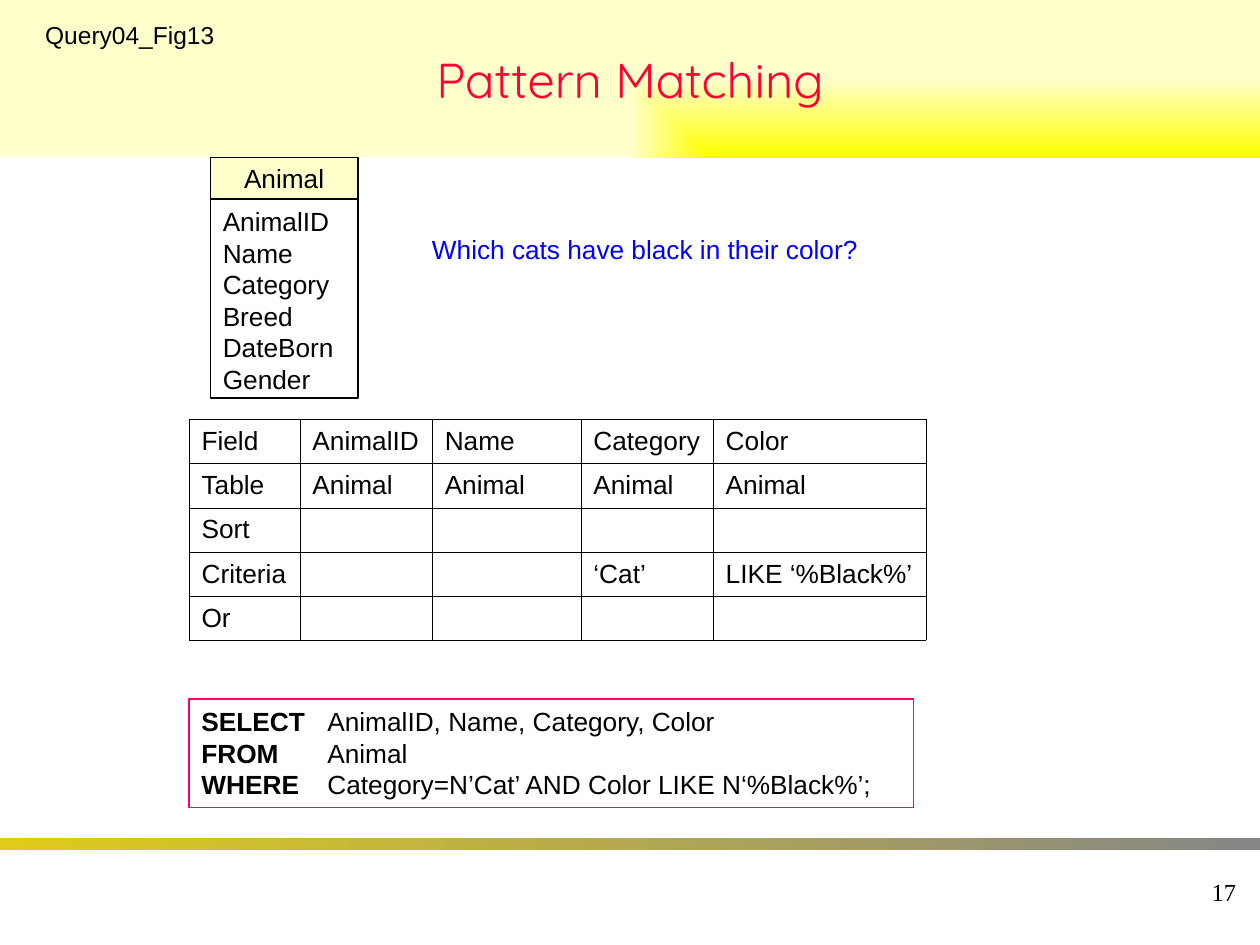
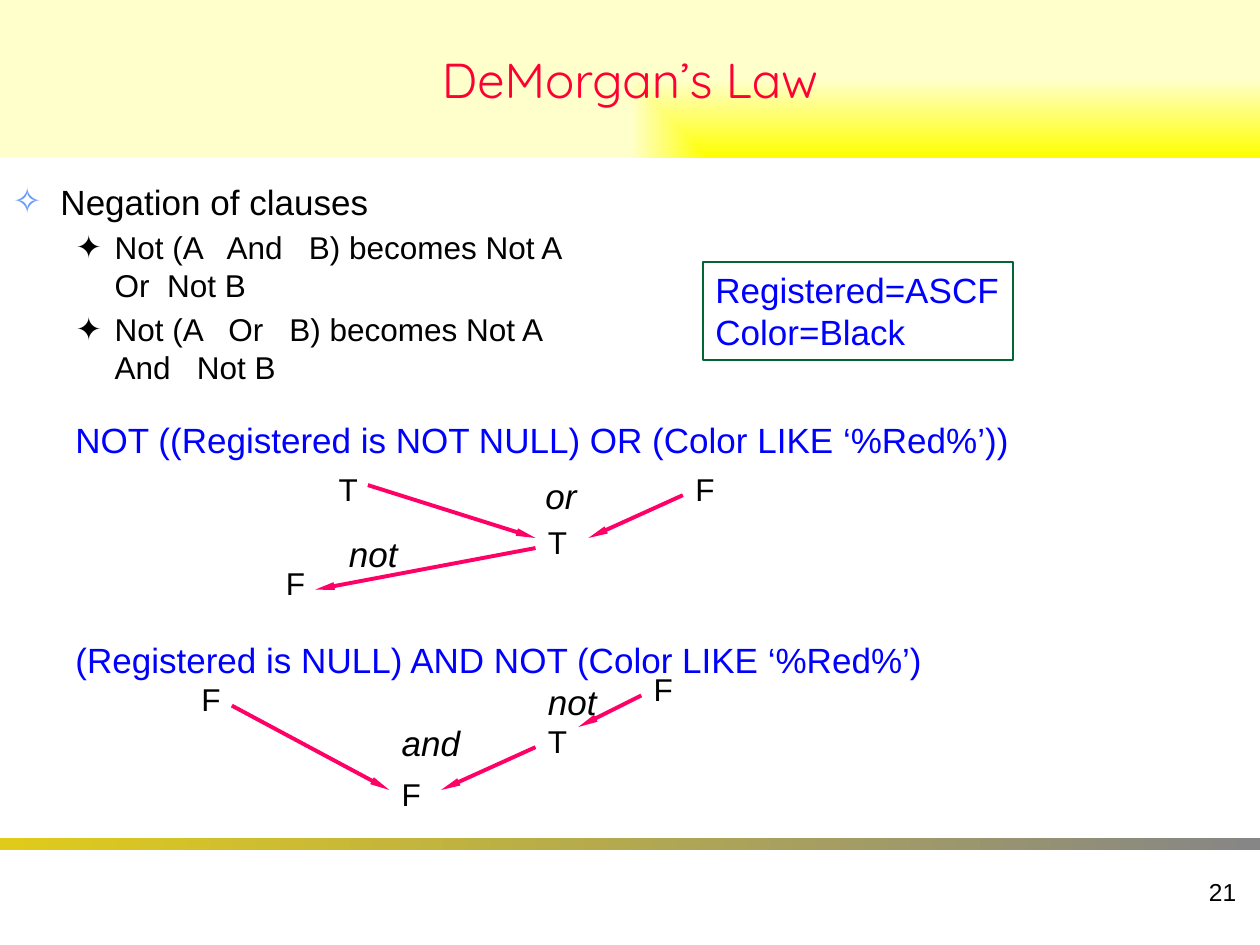
import dataclasses

import lxml.etree
import pptx
import pptx.dml.color
import pptx.enum.shapes
import pptx.enum.text
import pptx.oxml.ns
import pptx.util
from pptx.util import Inches

ALIGN = pptx.enum.text.PP_ALIGN
ANCHOR = pptx.enum.text.MSO_ANCHOR


@dataclasses.dataclass(frozen=True)
class Theme:
    """Colours, fonts and type sizes of the deck."""
    black: str = "000000"
    white: str = "FFFFFF"
    cream: str = "FFFFCC"
    yellow: str = "FFFF00"
    red: str = "FF0033"
    pink: str = "FF0066"
    blue: str = "0000FF"
    green: str = "006633"
    bullet_blue: str = "6699FF"
    gold: str = "E0CB1B"
    grey: str = "868686"
    text_font: str = "Arial"
    title_font: str = "Quicksand"
    number_font: str = "Times New Roman"
    title: int = 28
    large: int = 20
    medium: int = 18
    code: int = 15
    small: int = 14


def colour(value):
    return pptx.dml.color.RGBColor.from_string(value)


def add_node(parent, tag, **attributes):
    return lxml.etree.SubElement(parent, pptx.oxml.ns.qn(tag), attributes)


class SlideBuilder:
    def __init__(self, theme):
        self.theme = theme
        self.deck = pptx.Presentation()
        self.deck.slide_width = Inches(10)
        self.deck.slide_height = Inches(7.5)
        self.page = None

    def new_page(self, title, number, layout, number_font=None):
        """Start a slide with the shared title band, rule and page number."""
        theme = self.theme
        self.page = self.deck.slides.add_slide(self.deck.slide_layouts[layout])
        rule = self.rectangle(0, 6.65, 10, 0.1)
        self.gradient(rule, theme.gold, theme.grey)

        band = self.page.shapes.title
        self.place(band, 0, 0, 10, 1.25)
        self.gradient(band, theme.yellow, theme.cream)
        # The title band fades away from its bottom right corner
        fill = band.element.spPr.find(pptx.oxml.ns.qn("a:gradFill"))
        fill.remove(fill.find(pptx.oxml.ns.qn("a:lin")))
        corner = add_node(fill, "a:path", path="rect")
        add_node(corner, "a:fillToRect", l="100000", t="100000")
        self.set_lines(band, [title], theme.title, theme.red, font=theme.title_font,
                       align=ALIGN.CENTER, anchor=ANCHOR.MIDDLE, wrap=True)
        self.text([str(number)], 7.83, 6.83, 2.08, 0.5, theme.small, font=number_font,
                  align=ALIGN.RIGHT, anchor=ANCHOR.MIDDLE, wrap=True)

    def place(self, shape, left, top, width, height):
        shape.left, shape.top = Inches(left), Inches(top)
        shape.width, shape.height = Inches(width), Inches(height)

    def gradient(self, shape, start, end):
        shape.fill.gradient()
        shape.fill.gradient_angle = 0
        for stop, value in zip(shape.fill.gradient_stops, (start, end)):
            stop.color.rgb = colour(value)

    def style(self, para, size, ink, font=None, italic=False):
        para.font.size = pptx.util.Pt(size)
        para.font.name = font or self.theme.text_font
        para.font.color.rgb = colour(ink)
        para.font.italic = italic

    def set_lines(self, shape, lines, size, ink=None, font=None, italic=False,
                  align=ALIGN.LEFT, anchor=ANCHOR.TOP, wrap=False):
        """Fill a shape with lines; a (keyword, rest) pair gets a bold keyword and a tab."""
        frame = shape.text_frame
        frame.auto_size = pptx.enum.text.MSO_AUTO_SIZE.NONE
        frame.word_wrap = wrap
        frame.vertical_anchor = anchor
        for index, line in enumerate(lines):
            para = frame.add_paragraph() if index else frame.paragraphs[0]
            para.alignment = align
            self.style(para, size, ink or self.theme.black, font, italic)
            if isinstance(line, tuple):
                keyword, rest = line
                span = para.add_run()
                span.text = keyword
                span.font.bold = True
                para.add_run().text = "\t" + rest
            else:
                para.add_run().text = line

    def text(self, lines, left, top, width, height, size, ink=None, **options):
        box = self.page.shapes.add_textbox(
            Inches(left), Inches(top), Inches(width), Inches(height))
        self.set_lines(box, lines, size, ink, **options)
        return box

    def rectangle(self, left, top, width, height, fill=None, line=None):
        box = self.page.shapes.add_shape(
            pptx.enum.shapes.MSO_SHAPE.RECTANGLE,
            Inches(left), Inches(top), Inches(width), Inches(height))
        box.shadow.inherit = False
        if fill:
            box.fill.solid()
            box.fill.fore_color.rgb = colour(fill)
        else:
            box.fill.background()
        if line:
            box.line.color.rgb = colour(line)
            box.line.width = pptx.util.Pt(1)
        else:
            box.line.fill.background()
        return box

    def bullets(self, items, left, top, width, height):
        """Fill the body placeholder with (level, text) items."""
        theme = self.theme
        body = self.page.placeholders[1]
        self.place(body, left, top, width, height)
        frame = body.text_frame
        frame.auto_size = pptx.enum.text.MSO_AUTO_SIZE.NONE
        levels = [("✧", theme.bullet_blue, theme.large, 0.38, 0.38),
                  ("✦", theme.black, theme.medium, 0.81, 0.31)]
        for index, (level, content) in enumerate(items):
            mark, mark_colour, size, margin, hanging = levels[level]
            para = frame.add_paragraph() if index else frame.paragraphs[0]
            para.text = content
            para.level = level
            properties = para._p.get_or_add_pPr()
            properties.set("marL", str(Inches(margin)))
            properties.set("indent", str(-Inches(hanging)))
            add_node(add_node(properties, "a:buClr"), "a:srgbClr", val=mark_colour)
            add_node(properties, "a:buChar", char=mark)
            self.style(para, size, theme.black)

    def arrow(self, start, end):
        ends = [Inches(value) for value in (*start, *end)]
        line = self.page.shapes.add_connector(
            pptx.enum.shapes.MSO_CONNECTOR.STRAIGHT, *ends)
        line.line.color.rgb = colour(self.theme.pink)
        line.line.width = pptx.util.Pt(2.25)
        properties = line.element.spPr
        add_node(properties.find(pptx.oxml.ns.qn("a:ln")), "a:tailEnd",
                 type="triangle", w="sm", len="lg")
        add_node(properties, "a:effectLst")

    def table(self, rows, left, top, widths, row_height):
        grid = self.page.shapes.add_table(
            len(rows), len(widths), Inches(left), Inches(top),
            Inches(sum(widths)), Inches(row_height * len(rows))).table
        grid.first_row = grid.horz_banding = False
        for column, width in zip(grid.columns, widths):
            column.width = Inches(width)
        for row_index, row in enumerate(rows):
            for column_index, content in enumerate(row):
                self.cell(grid.cell(row_index, column_index), content)

    def cell(self, cell, content):
        cell.margin_top = cell.margin_bottom = Inches(0.02)
        cell.vertical_anchor = ANCHOR.MIDDLE
        properties = cell._tc.get_or_add_tcPr()
        for side in ("a:lnL", "a:lnR", "a:lnT", "a:lnB"):
            border = add_node(properties, side, w=str(pptx.util.Pt(0.25)))
            add_node(add_node(border, "a:solidFill"), "a:srgbClr", val=self.theme.black)
        cell.fill.background()
        para = cell.text_frame.paragraphs[0]
        self.style(para, self.theme.code, self.theme.black)
        if content:
            para.add_run().text = content


def pattern_matching(builder):
    theme = builder.theme
    builder.new_page("Pattern Matching", 17, layout=5, number_font=theme.number_font)
    builder.text(["Query04_Fig13"], 0.26, 0.11, 1.55, 0.34, theme.small)
    question = builder.text(["Which cats have black in their color?"],
                            3.33, 1.83, 3.67, 0.83, theme.code, theme.blue, wrap=True)
    question.text_frame.paragraphs[0].line_spacing = 0.9

    # Animal entity
    fields = builder.rectangle(1.67, 1.58, 1.17, 1.58, theme.white, theme.black)
    builder.set_lines(
        fields, ["AnimalID", "Name", "Category", "Breed", "DateBorn", "Gender"], theme.code)
    entity = builder.rectangle(1.67, 1.25, 1.17, 0.33, theme.cream, theme.black)
    builder.set_lines(entity, ["Animal"], theme.code,
                      align=ALIGN.CENTER, anchor=ANCHOR.MIDDLE)

    # Query grid
    builder.table([
        ("Field", "AnimalID", "Name", "Category", "Color"),
        ("Table", *["Animal"] * 4),
        ("Sort", *[""] * 4),
        ("Criteria", "", "", "‘Cat’", "LIKE ‘%Black%’"),
        ("Or", *[""] * 4),
    ], 1.5, 3.33, (0.88, 1.05, 1.18, 1.05, 1.69), 0.35)

    # SQL statement
    statement = builder.rectangle(1.5, 5.55, 5.75, 0.86, line=theme.pink)
    builder.set_lines(statement, [
        ("SELECT", "AnimalID, Name, Category, Color"),
        ("FROM", "Animal"),
        ("WHERE", "Category=N’Cat’ AND Color LIKE N‘%Black%’;"),
    ], theme.code, wrap=True)


def demorgans_law(builder):
    theme = builder.theme
    builder.new_page("DeMorgan’s Law", 21, layout=1)
    builder.bullets([
        (0, "Negation of clauses"),
        (1, "Not (A   And   B) becomes Not A  Or  Not B"),
        (1, "Not (A   Or   B) becomes Not A   And   Not B"),
    ], 0, 1.38, 4.83, 5.2)

    # Sample row
    sample = builder.rectangle(5.58, 2.08, 2.46, 0.78, line=theme.green)
    builder.set_lines(sample, ["Registered=ASCF", "Color=Black"], theme.large, theme.blue)

    # The two equivalent conditions
    for condition, top, width in [
            ("NOT ((Registered is NOT NULL) OR (Color LIKE ‘%Red%’))", 3.27, 7.67),
            ("(Registered is NULL) AND NOT (Color LIKE ‘%Red%’)", 5.02, 6.98)]:
        builder.text([condition], 0.5, top, width, 0.44, theme.large, theme.blue)

    # Truth values
    for value, left, top in [
            ("T", 2.59, 3.68), ("F", 5.42, 3.68), ("T", 4.25, 4.1), ("F", 2.17, 4.43),
            ("F", 1.5, 5.35), ("F", 5.09, 5.27), ("T", 4.25, 5.68), ("F", 3.09, 6.1)]:
        builder.text([value], left, top, 0.36, 0.4, theme.medium)

    # Operators
    for operator, left, top, width in [
            ("or", 4.23, 3.72, 0.45), ("not", 2.67, 4.18, 0.59),
            ("and", 3.09, 5.68, 0.67), ("not", 4.25, 5.35, 0.59)]:
        builder.text([operator], left, top, width, 0.44, theme.large, italic=True)

    # Evaluation steps
    for start, end in [
            ((2.92, 3.85), (4.25, 4.27)), ((5.42, 3.93), (4.67, 4.27)),
            ((4.25, 4.35), (2.5, 4.68)), ((1.84, 5.6), (3.09, 6.27)),
            ((4.25, 5.93), (3.5, 6.27)), ((5.09, 5.52), (4.59, 5.77))]:
        builder.arrow(start, end)


def main():
    builder = SlideBuilder(Theme())
    pattern_matching(builder)
    demorgans_law(builder)
    builder.deck.save("out.pptx")


if __name__ == "__main__":
    main()
